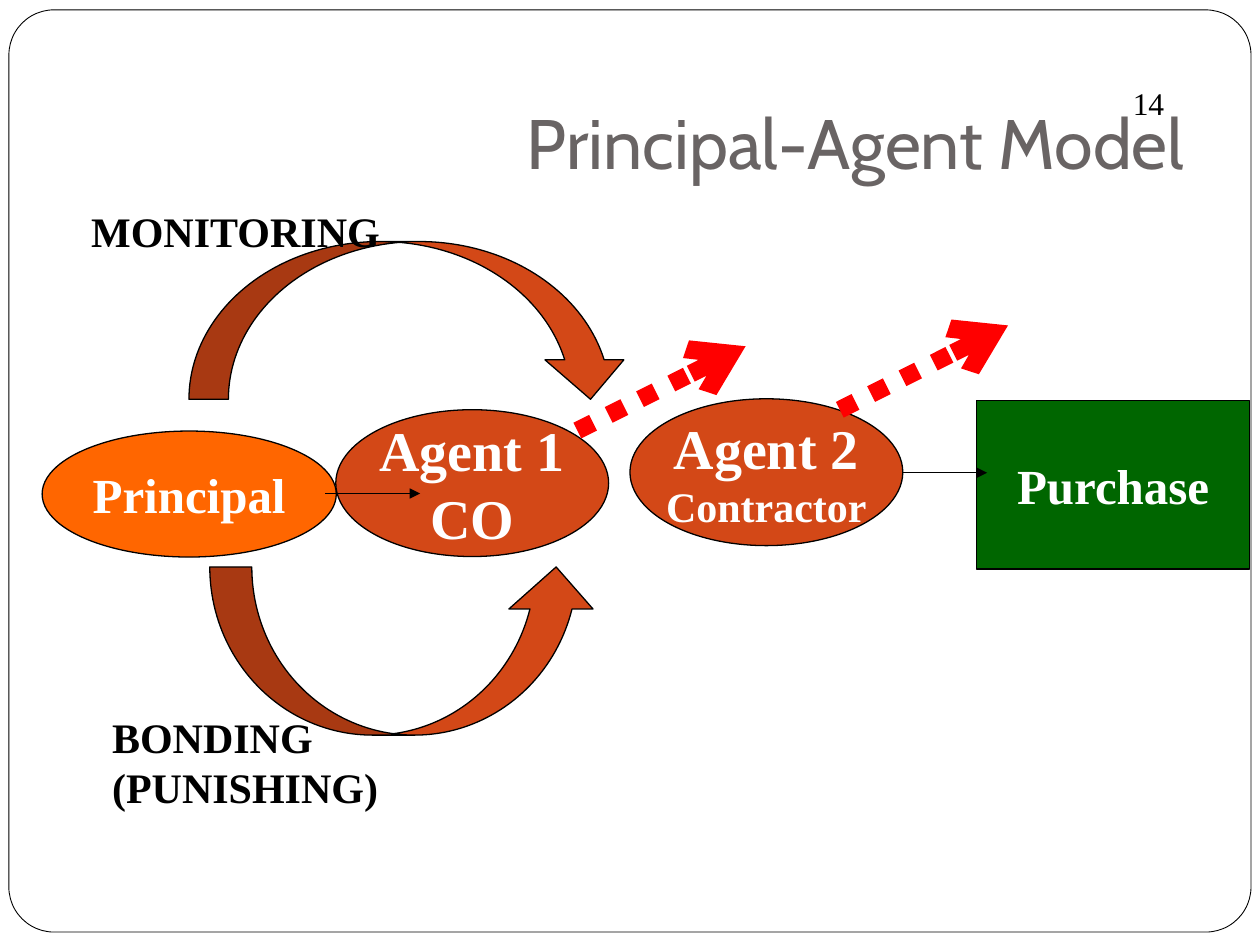
from pptx import Presentation
from pptx.dml.color import RGBColor
from pptx.enum.dml import MSO_LINE
from pptx.enum.shapes import MSO_CONNECTOR, MSO_SHAPE
from pptx.enum.text import MSO_ANCHOR, PP_ALIGN
from pptx.oxml.ns import qn
from pptx.util import Cm, Pt
from lxml.etree import SubElement

SERIF = "Times New Roman"
RUST = "D34817"
BLACK = "000000"
WHITE = "FFFFFF"


def color(code):
    return RGBColor.from_string(code)


def write(frame, lines, ink, bold=True, face=SERIF, align=PP_ALIGN.LEFT):
    for i, (text, size) in enumerate(lines):
        para = frame.paragraphs[0] if i == 0 else frame.add_paragraph()
        para.alignment = align
        run = para.add_run()
        run.text = text
        run.font.name = face
        run.font.size = Pt(size)
        run.font.bold = bold
        run.font.color.rgb = color(ink)


def shape(slide, kind, box, fill, width=0.75):
    item = slide.shapes.add_shape(kind, *map(Cm, box))
    item.shadow.inherit = False
    item.fill.solid()
    item.fill.fore_color.rgb = color(fill)
    item.line.color.rgb = color(BLACK)
    item.line.width = Pt(width)
    return item


def node(slide, kind, box, fill, lines):
    frame = shape(slide, kind, box, fill).text_frame
    frame.word_wrap = False
    frame.vertical_anchor = MSO_ANCHOR.MIDDLE
    write(frame, lines, WHITE, align=PP_ALIGN.CENTER)


def label(slide, box, text, size, bold=True, align=PP_ALIGN.LEFT):
    frame = slide.shapes.add_textbox(*map(Cm, box)).text_frame
    frame.word_wrap = True
    write(frame, [(text, size)], BLACK, bold, align=align)


def arrow(slide, ends, ink, width, head, dash=None):
    item = slide.shapes.add_connector(MSO_CONNECTOR.STRAIGHT, *map(Cm, ends))
    item.line.color.rgb = color(ink)
    item.line.width = Pt(width)
    if dash:
        item.line.dash_style = dash
    SubElement(item.line._get_or_add_ln(), qn("a:tailEnd"), type=head)
    SubElement(item._element.spPr, qn("a:effectLst"))


def frame_page(slide, left, top, width, height):
    box = (left, top, width, height)
    border = shape(slide, MSO_SHAPE.ROUNDED_RECTANGLE, box, WHITE, 0.5)
    border.adjustments[0] = 0.049
    slide.shapes._spTree.insert(2, border._element)
    label(slide, (left + 21.13, top + 1.37, 2.41, 1.02), "14", 18,
          False, PP_ALIGN.RIGHT)


def head_line(slide, left, top, width, height):
    title = slide.shapes.title
    title.left, title.top = Cm(left), Cm(top)
    title.width, title.height = Cm(width), Cm(height)
    frame = title.text_frame
    frame.vertical_anchor = MSO_ANCHOR.BOTTOM
    frame.margin_bottom = Cm(0.25)
    write(frame, [("Principal-Agent Model", 40)], "696464", False,
          "Cabin", PP_ALIGN.RIGHT)


def chain(slide, left, top):
    oval = MSO_SHAPE.OVAL
    nodes = [
        (oval, 0, 2.13, 5.93, 2.54, "FF6600", [("Principal", 28)]),
        (oval, 5.92, 1.7, 5.5, 2.96, RUST, [("Agent 1", 32), ("CO", 32)]),
        (MSO_SHAPE.RECTANGLE, 18.84, 1.52, 5.5, 3.39, "006600",
         [("Purchase", 28)]),
        (oval, 11.85, 1.48, 5.5, 2.96, RUST,
         [("Agent 2", 32), ("Contractor", 24)]),
    ]
    links = [(5.71, 3.39, 1.91), (16.3, 2.97, 2.75)]
    exits = [(10.79, 2.12), (16.08, 1.7)]

    for kind, x, y, w, h, fill, lines in nodes[:3]:
        node(slide, kind, (left + x, top + y, w, h), fill, lines)
    for x, y, run in links:
        x, y = left + x, top + y
        arrow(slide, (x, y, x + run, y), BLACK, 0.75, "triangle")
    for kind, x, y, w, h, fill, lines in nodes[3:]:
        node(slide, kind, (left + x, top + y, w, h), fill, lines)
    for x, y in exits:
        x, y = left + x, top + y
        arrow(slide, (x, y, x + 3.39, y - 1.7), "FF0000", 10, "arrow",
              MSO_LINE.ROUND_DOT)


def loop(slide, left, top):
    arcs = [
        (MSO_SHAPE.CURVED_DOWN_ARROW, 2.22, 0.85, 8.89, 3.18),
        (MSO_SHAPE.CURVED_UP_ARROW, 2.64, 7.41, 7.83, 3.39),
    ]
    notes = [
        ("MONITORING", 0, 0, 1.3),
        ("BONDING (PUNISHING)", 0.42, 10.2, 2.31),
    ]
    for kind, x, y, w, h in arcs:
        arc = shape(slide, kind, (left + x, top + y, w, h), RUST)
        for i, part in enumerate((0.25, 0.5, 0.25)):
            arc.adjustments[i] = part
    for text, x, y, h in notes:
        label(slide, (left + x, top + y, 6.99, h), text, 24)


def main():
    deck = Presentation()
    deck.slide_width, deck.slide_height = Cm(25.4), Cm(19.05)
    slide = deck.slides.add_slide(deck.slide_layouts[5])
    frame_page(slide, 0.18, 0.2, 25.04, 18.59)
    head_line(slide, 2.54, 0.76, 21.59, 3.18)
    chain(slide, 0.85, 6.56)
    loop(slide, 1.59, 4.02)
    deck.save("out.pptx")


if __name__ == "__main__":
    main()
